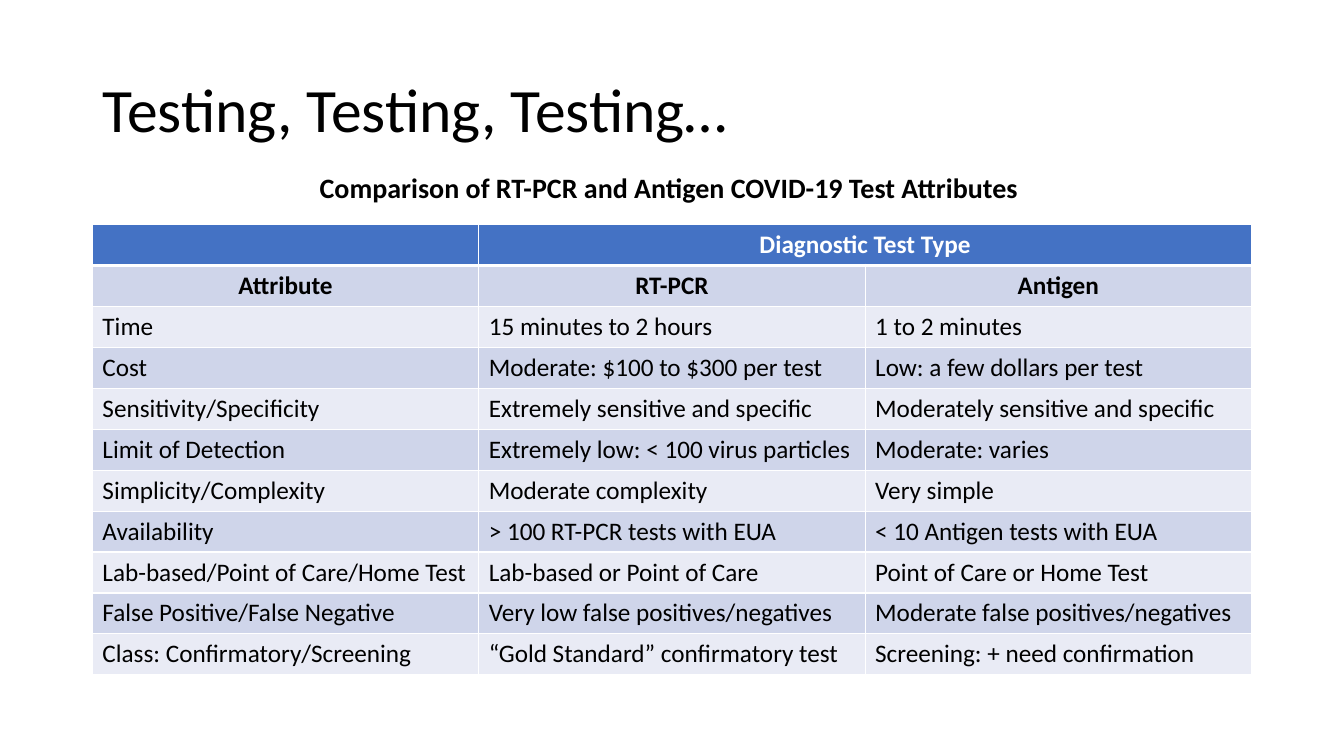
from lxml.etree import SubElement
from pptx import Presentation
from pptx.dml.color import RGBColor
from pptx.enum.text import MSO_ANCHOR, MSO_AUTO_SIZE, PP_ALIGN
from pptx.oxml.ns import qn
from pptx.util import Emu, Pt

FONT = "Calibri"
COLORS = {
    "black": "000000",
    "white": "FFFFFF",
    "header": "4472C4",
    "band_dark": "CFD5EA",
    "band_light": "E9EBF5",
}
ROW_HEIGHT = 39
ROWS = [
    ["", "Diagnostic Test Type", ""],
    ["Attribute", "RT-PCR", "Antigen"],
    ["Time", "15 minutes to 2 hours", "1 to 2 minutes"],
    ["Cost", "Moderate: $100 to $300 per test", "Low: a few dollars per test"],
    ["Sensitivity/Specificity", "Extremely sensitive and specific", "Moderately sensitive and specific"],
    ["Limit of Detection", "Extremely low: < 100 virus particles", "Moderate: varies"],
    ["Simplicity/Complexity", "Moderate complexity", "Very simple"],
    ["Availability", "> 100 RT-PCR tests with EUA", "< 10 Antigen tests with EUA"],
    ["Lab-based/Point of Care/Home Test", "Lab-based or Point of Care", "Point of Care or Home Test"],
    ["False Positive/False Negative", "Very low false positives/negatives", "Moderate false positives/negatives"],
    ["Class: Confirmatory/Screening", "“Gold Standard” confirmatory test", "Screening: + need confirmation"],
]


def px(n):
    return Emu(n * 9525)


def color(name):
    return RGBColor.from_string(COLORS[name])


def add_run(p, text, size, color_name="black", bold=False):
    r = p.add_run()
    r.text = text
    r.font.name = FONT
    r.font.size = Pt(size)
    r.font.bold = bold
    r.font.color.rgb = color(color_name)


def set_title(slide, text):
    sp = slide.shapes.title
    sp.left, sp.top, sp.width, sp.height = px(88), px(38), px(1104), px(139)
    tf = sp.text_frame
    tf.auto_size = MSO_AUTO_SIZE.NONE
    tf.vertical_anchor = MSO_ANCHOR.MIDDLE
    p = tf.paragraphs[0]
    p.alignment = PP_ALIGN.LEFT
    p.line_spacing = 0.9
    add_run(p, text, 44)


def add_caption(slide, text):
    sp = slide.shapes.add_textbox(px(295), px(158), px(691), px(42))
    tf = sp.text_frame
    tf.word_wrap = False
    tf.auto_size = MSO_AUTO_SIZE.SHAPE_TO_FIT_TEXT
    add_run(tf.paragraphs[0], text, 20, bold=True)


def set_borders(cell, top, bottom):
    tcPr = cell._tc.get_or_add_tcPr()
    widths = {"a:lnL": 1, "a:lnR": 1, "a:lnT": top, "a:lnB": bottom}
    for i, (tag, width) in enumerate(widths.items()):
        ln = SubElement(tcPr, qn(tag), w=str(Pt(width)))
        fill = SubElement(ln, qn("a:solidFill"))
        SubElement(fill, qn("a:srgbClr"), val=COLORS["white"])
        tcPr.insert(i, ln)


def format_cell(cell, text, row):
    if row == 0:
        fill = "header"
    else:
        fill = "band_dark" if row % 2 else "band_light"
    cell.fill.solid()
    cell.fill.fore_color.rgb = color(fill)
    set_borders(cell, 3 if row == 1 else 1, 3 if row == 0 else 1)
    if text:
        p = cell.text_frame.paragraphs[0]
        p.alignment = PP_ALIGN.CENTER if row < 2 else PP_ALIGN.LEFT
        add_run(p, text, 18, "white" if row == 0 else "black", row < 2)


def add_comparison(slide, rows):
    frame = slide.shapes.add_table(
        len(rows), len(rows[0]), px(88), px(214), px(1104), px(ROW_HEIGHT * len(rows))
    )
    table = frame.table
    table.cell(0, 1).merge(table.cell(0, 2))
    for i, texts in enumerate(rows):
        table.rows[i].height = px(ROW_HEIGHT)
        for j, text in enumerate(texts):
            format_cell(table.cell(i, j), text, i)


def main():
    prs = Presentation()
    prs.slide_width, prs.slide_height = px(1280), px(720)
    slide = prs.slides.add_slide(prs.slide_layouts[5])
    set_title(slide, "Testing, Testing, Testing…")
    add_comparison(slide, ROWS)
    add_caption(slide, "Comparison of RT-PCR and Antigen COVID-19 Test Attributes")
    prs.save("out.pptx")


if __name__ == "__main__":
    main()
